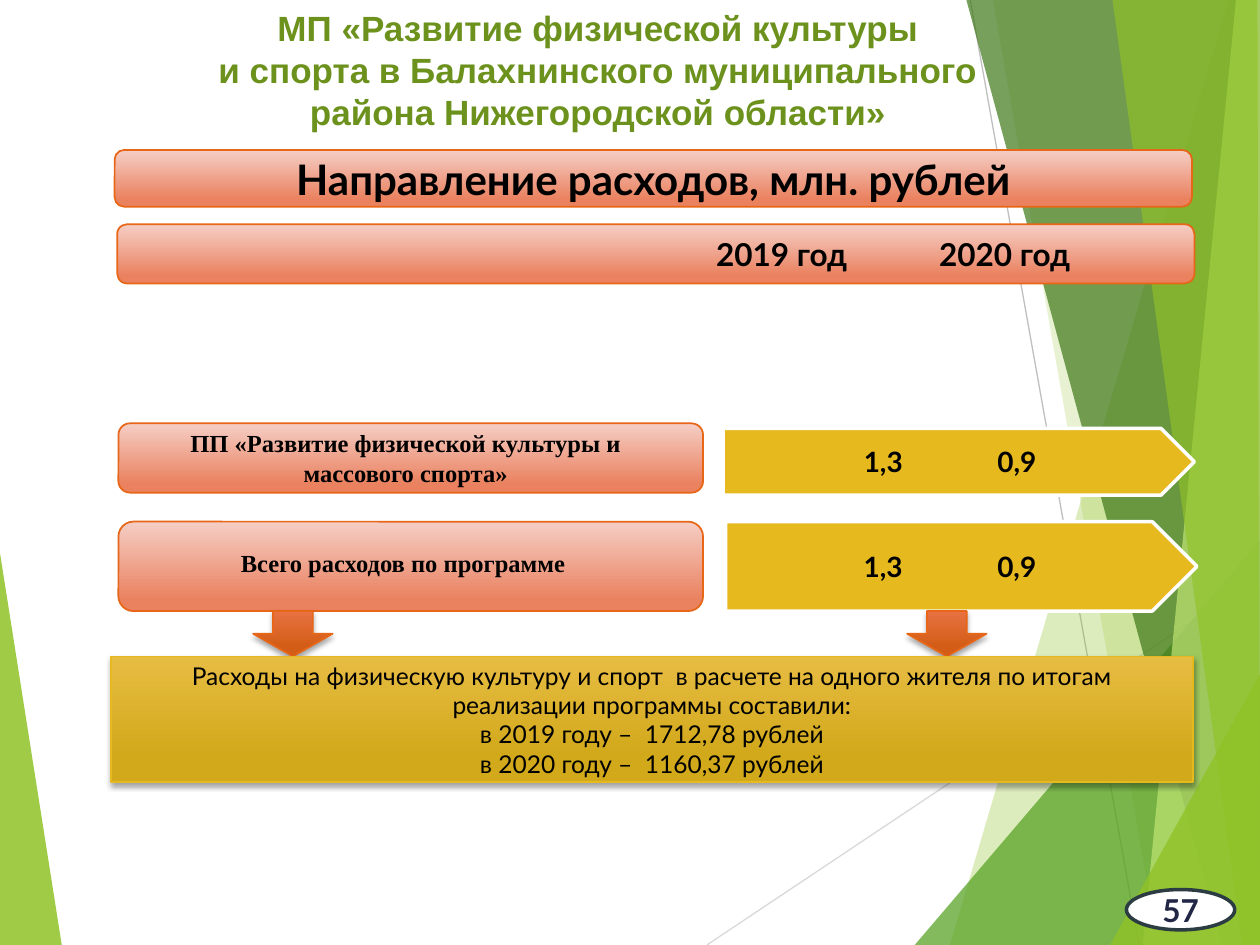
from dataclasses import dataclass

from lxml import etree
from pptx import Presentation
from pptx import util as u
from pptx.dml.color import RGBColor
from pptx.enum import shapes, text
from pptx.oxml.ns import qn

COLORS = {
    "black": "000000", "white": "FFFFFF", "title": "6C921D", "number": "212745",
    "lime": "90C226", "green": "54A021", "forest": "3F7819", "pale": "C0E474",
    "orange": "E76618", "gold": "E6B91E", "slate": "2C3C43",
    "salmon_top": "F5CEC5", "salmon_low": "EA815F",
    "arrow_top": "E87242", "arrow_low": "D35D16",
    "gold_top": "E7BC43", "gold_low": "D2A91B",
    "light_gray": "D9D9D9", "gray": "BFBFBF",
}
KIND = shapes.MSO_SHAPE


@dataclass
class Font:
    name: str
    size: float
    bold: bool = True
    color: str = "black"


@dataclass
class Gradient:
    top: str
    low: str
    stop: float


@dataclass
class Facet:
    points: list[tuple[float, float]]
    color: str
    opacity: int


@dataclass
class Program:
    label: str
    values: tuple[str, str]
    bar: tuple[float, float, float, float]
    label_box: tuple[float, float, float, float]
    pentagon: tuple[float, float, float, float]


SALMON = Gradient("salmon_top", "salmon_low", 0.88)
ARROW = Gradient("arrow_top", "arrow_low", 0.78)
GOLD = Gradient("gold_top", "gold_low", 0.78)
LABEL_FONT = Font("Times New Roman", 14)
VALUE_FONT = Font("Lato", 16)
YEAR_TABS = (5.25, 7.02)
VALUE_TABS = (7.01, 8.07)

LEFT_FACET = Facet([(0, 4.39), (0.49, 7.5), (0, 7.5)], "lime", 85)
RIGHT_FACETS = [
    Facet([(9.75, 0), (7.54, 7.5), (10, 7.5), (10, 0)], "lime", 30),
    Facet([(7.88, 0), (9.19, 7.5), (10, 7.5), (10, 0)], "lime", 20),
    Facet([(7.26, 7.5), (10, 4.29), (10, 7.5)], "green", 72),
    Facet([(7.67, 0), (9.7, 7.5), (10, 7.5), (10, 0)], "forest", 70),
    Facet([(9.81, 0), (9.07, 7.5), (10, 7.5), (10, 0)], "pale", 70),
    Facet([(8.83, 0), (9.86, 7.5), (10, 7.5), (9.98, 0)], "lime", 65),
    Facet([(8.81, 7.5), (10, 5.35), (10, 7.5)], "lime", 80),
]
PROGRAMS = [
    Program("ПП «Развитие физической культуры и массового спорта»", ("1,3", "0,9"),
            (0.94, 3.36, 4.64, 0.55), (1.05, 3.35, 4.34, 0.57), (5.74, 3.4, 3.74, 0.53)),
    Program("Всего расходов по программе", ("1,3", "0,9"),
            (0.94, 4.14, 4.64, 0.71), (1.03, 4.3, 4.34, 0.34), (5.76, 4.14, 3.74, 0.71)),
]


def rgb(name: str) -> RGBColor:
    return RGBColor.from_string(COLORS[name])


def inches(values) -> list[int]:
    return [u.Inches(value) for value in values]


def draw_facet(page, facet: Facet) -> None:
    points = [tuple(inches(point)) for point in facet.points]
    builder = page.shapes.build_freeform(*points[0], scale=1.0)
    builder.add_line_segments(points[1:], close=True)
    shape = builder.convert_to_shape()
    shape.shadow.inherit = False
    shape.line.fill.background()
    shape.fill.solid()
    shape.fill.fore_color.rgb = rgb(facet.color)
    color = next(shape.element.spPr.iter(qn("a:srgbClr")))
    etree.SubElement(color, qn("a:alpha"), val=str(facet.opacity * 1000))


def draw_line(page, start, end, color: str) -> None:
    line = page.shapes.add_connector(shapes.MSO_CONNECTOR.STRAIGHT, *inches(start + end))
    line.line.color.rgb = rgb(color)
    line.line.width = u.Pt(0.75)
    etree.SubElement(line.element.spPr, qn("a:effectLst"))


def add_shadow(shape) -> None:
    effects = shape.element.spPr.find(qn("a:effectLst"))
    shadow = etree.SubElement(effects, qn("a:outerShdw"), blurRad=str(u.Pt(3)),
                              dist=str(u.Pt(2)), dir="5400000", rotWithShape="0")
    color = etree.SubElement(shadow, qn("a:srgbClr"), val=COLORS["black"])
    etree.SubElement(color, qn("a:alpha"), val="35000")


def draw_shape(page, kind, place, fill: str | Gradient, line: str,
               width: float = 1, shadow: bool = False):
    shape = page.shapes.add_shape(kind, *inches(place))
    shape.shadow.inherit = False
    if isinstance(fill, Gradient):
        shape.fill.gradient()
        shape.fill.gradient_angle = 270
        top, low = shape.fill.gradient_stops
        top.color.rgb, top.position = rgb(fill.top), 0
        low.color.rgb, low.position = rgb(fill.low), fill.stop
    else:
        shape.fill.solid()
        shape.fill.fore_color.rgb = rgb(fill)
    shape.line.color.rgb = rgb(line)
    shape.line.width = u.Pt(width)
    if shadow:
        add_shadow(shape)
    return shape


def write(box, lines: list[str], font: Font, anchor=text.MSO_ANCHOR.MIDDLE,
          align=text.PP_ALIGN.CENTER, wrap: bool = True) -> None:
    frame = box.text_frame
    frame.word_wrap = wrap
    frame.auto_size = text.MSO_AUTO_SIZE.NONE
    frame.vertical_anchor = anchor
    for index, line in enumerate(lines):
        para = frame.add_paragraph() if index else frame.paragraphs[0]
        para.alignment = align
        span = para.add_run()
        span.text = line
        span.font.name = font.name
        span.font.size = u.Pt(font.size)
        span.font.bold = font.bold
        span.font.color.rgb = rgb(font.color)


def write_columns(box, values, stops, font: Font) -> None:
    write(box, ["".join("\t" + value for value in values)], font, align=text.PP_ALIGN.LEFT)
    box.text_frame.margin_left = 0
    properties = box.text_frame.paragraphs[0]._p.get_or_add_pPr()
    tabs = etree.SubElement(properties, qn("a:tabLst"))
    for stop in stops:
        etree.SubElement(tabs, qn("a:tab"), pos=str(u.Inches(stop)), algn="ctr")


def draw_program(page, program: Program) -> None:
    draw_shape(page, KIND.ROUNDED_RECTANGLE, program.bar, SALMON, "orange")
    label = page.shapes.add_textbox(*inches(program.label_box))
    write(label, [program.label], LABEL_FONT, text.MSO_ANCHOR.TOP)
    pentagon = draw_shape(page, KIND.PENTAGON, program.pentagon, "gold", "white", 2)
    stops = [stop - program.pentagon[0] for stop in VALUE_TABS]
    write_columns(pentagon, program.values, stops, VALUE_FONT)


def main() -> None:
    deck = Presentation()
    deck.slide_width, deck.slide_height = inches((10, 7.5))
    page = deck.slides.add_slide(deck.slide_layouts[5])

    draw_facet(page, LEFT_FACET)
    draw_line(page, (5.61, 7.5), (10, 4.57), "light_gray")
    draw_line(page, (7.7, 0), (9.04, 7.5), "gray")
    for facet in RIGHT_FACETS:
        draw_facet(page, facet)

    heading = draw_shape(page, KIND.ROUNDED_RECTANGLE, (0.91, 1.19, 8.55, 0.45), SALMON, "orange")
    write(heading, ["Направление расходов, млн. рублей"], Font("Lato", 24))
    years = draw_shape(page, KIND.ROUNDED_RECTANGLE, (0.93, 1.78, 8.55, 0.47), SALMON, "orange")
    write_columns(years, ("2019 год", "2020 год"), YEAR_TABS, Font("Lato", 18))

    for program in PROGRAMS:
        draw_program(page, program)
    for left in (2.01, 7.2):
        draw_shape(page, KIND.DOWN_ARROW, (left, 4.85, 0.63, 0.36), ARROW, "orange", shadow=True)

    summary = draw_shape(page, KIND.RECTANGLE, (0.88, 5.21, 8.59, 1), GOLD, "gold", shadow=True)
    write(summary, [
        "Расходы на физическую культуру и спорт  в расчете на одного жителя по итогам "
        "реализации программы составили:",
        "в 2019 году –  1712,78 рублей",
        "в 2020 году –  1160,37 рублей",
    ], Font("Lato", 14, bold=False))

    number = draw_shape(page, KIND.OVAL, (8.94, 7.06, 0.86, 0.32), "white", "slate", 2)
    write(number, ["57"], Font("Lato", 18, color="number"), wrap=False)

    title = page.shapes.title
    title.left, title.top, title.width, title.height = inches((0.84, 0, 7.81, 1.11))
    write(title, [
        "МП «Развитие физической культуры",
        "и спорта в Балахнинского муниципального",
        "района Нижегородской области»",
    ], Font("Arial", 20, color="title"), text.MSO_ANCHOR.TOP)
    title.element.getparent().append(title.element)

    deck.save("out.pptx")


if __name__ == "__main__":
    main()
